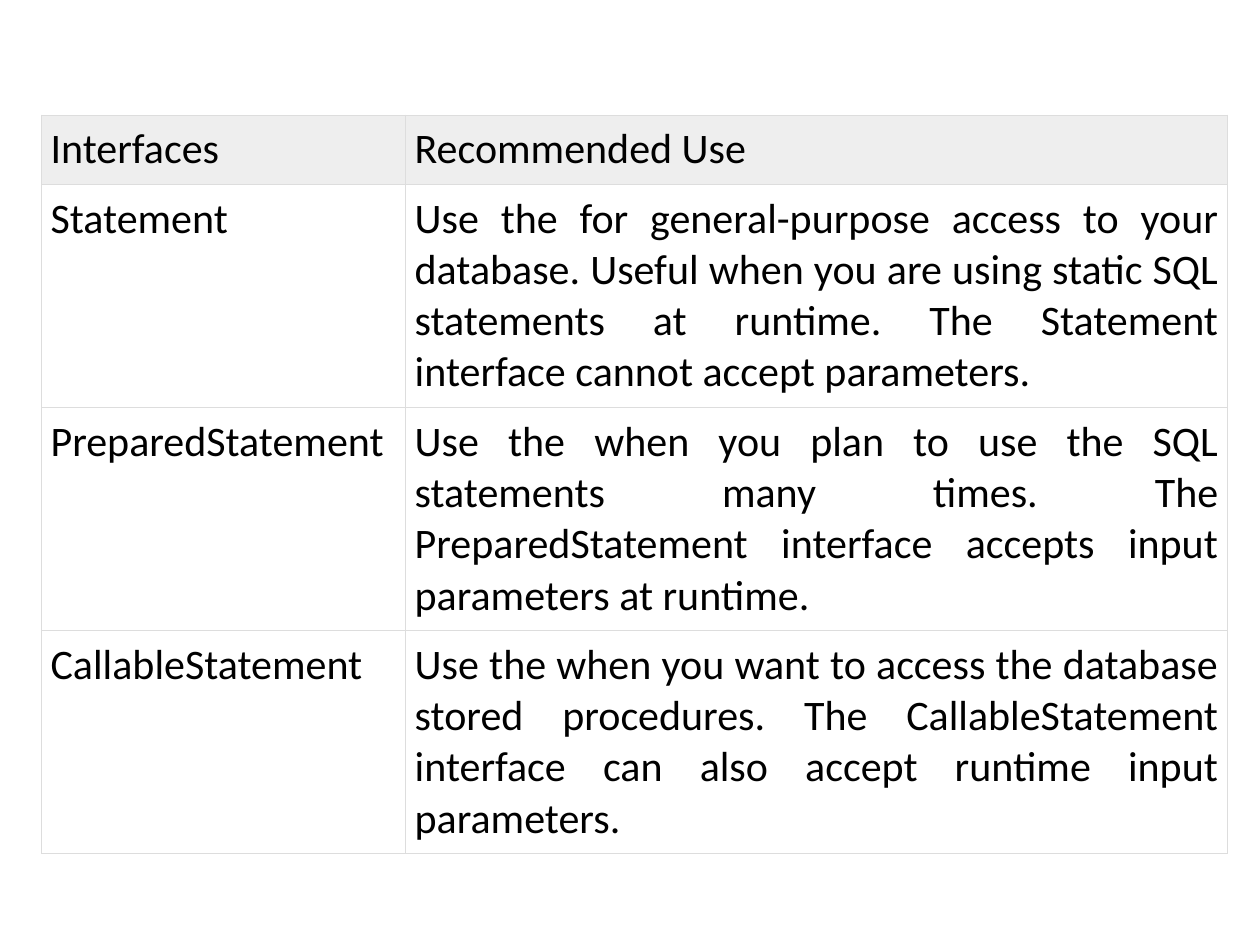
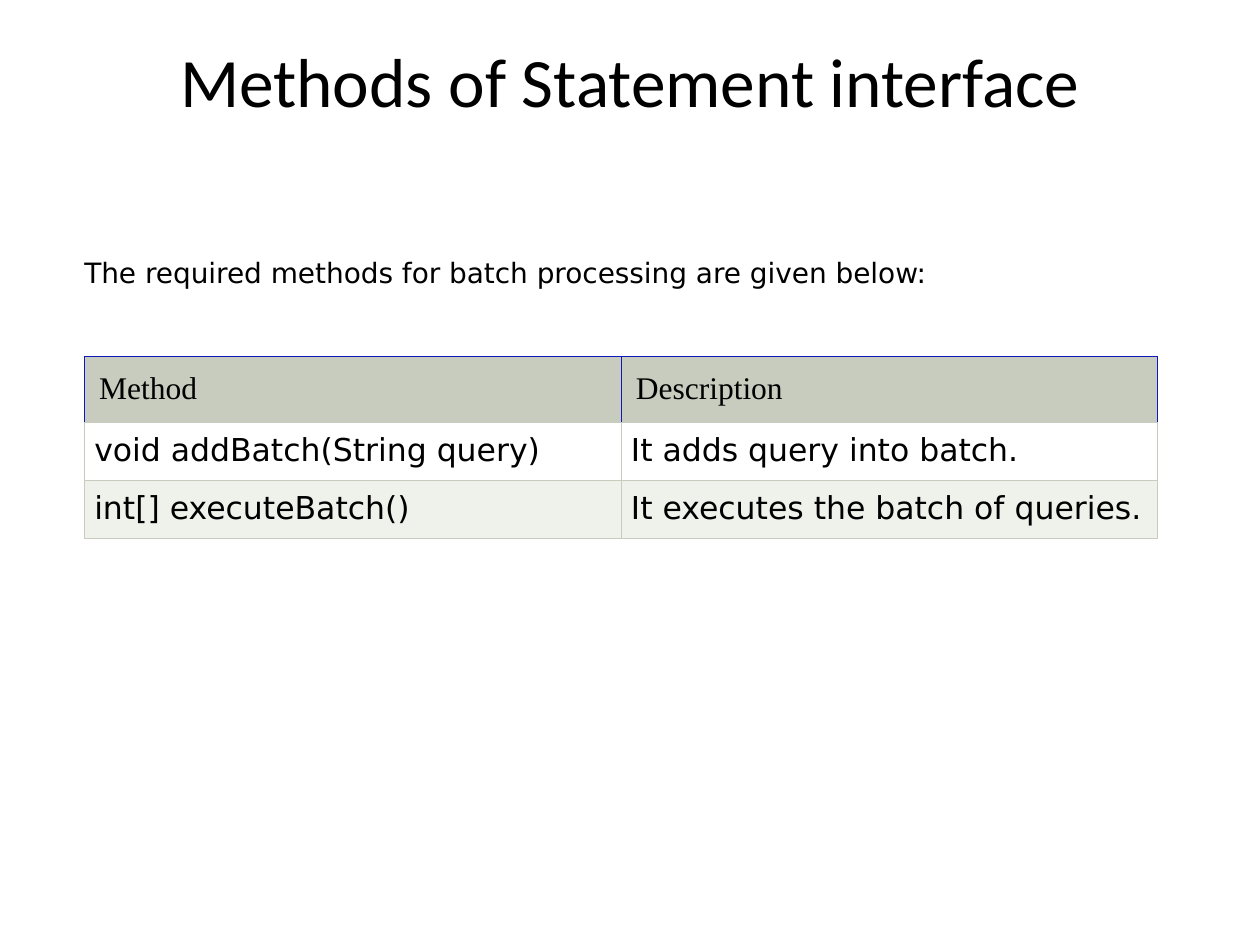
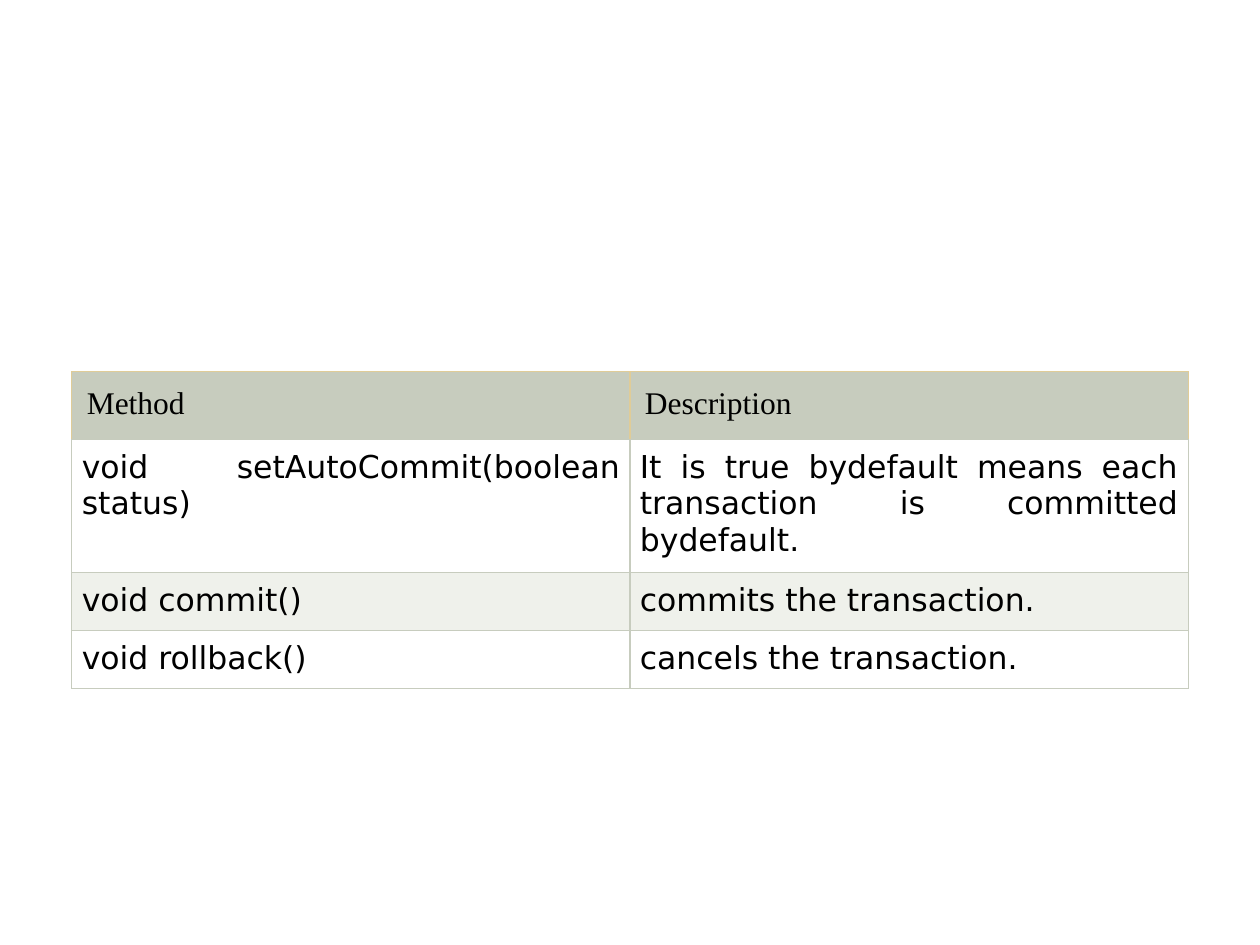
"""Builds three slides on the JDBC statement interfaces and their methods."""
from lxml import etree
from pptx import Presentation
from pptx import util as u
from pptx.dml.color import RGBColor
from pptx.enum import shapes, text
from pptx.oxml.ns import qn

BLACK = RGBColor(0x00, 0x00, 0x00)
WHITE = RGBColor(0xFF, 0xFF, 0xFF)
SILVER = RGBColor(0xDD, 0xDD, 0xDD)
MIST = RGBColor(0xEE, 0xEE, 0xEE)
SAGE = RGBColor(0xC7, 0xCC, 0xBE)
PALE_SAGE = RGBColor(0xEF, 0xF1, 0xEB)
BLUE = RGBColor(0x10, 0x17, 0xBB)
GOLD = RGBColor(0xE0, 0xCC, 0x98)

LEFT, CENTER, JUSTIFY = (text.PP_ALIGN.LEFT, text.PP_ALIGN.CENTER,
                         text.PP_ALIGN.JUSTIFY)
SIDES = ("lnL", "lnR", "lnT", "lnB")
MARGINS = ("margin_left", "margin_top", "margin_right", "margin_bottom")
TITLE_ONLY, BLANK = 5, 6

HEADING = {"name": "Times New Roman", "size": u.Pt(18)}
BODY = {"name": "DejaVu Sans", "size": u.Pt(18)}
NOTE = {"name": "DejaVu Sans", "size": u.Pt(16)}
TITLE = {"name": "Calibri", "size": u.Pt(39.6)}
LARGE = {"name": "Calibri", "size": u.Pt(24)}


def set_all(obj, values):
    for name, value in values.items():
        setattr(obj, name, value)


class Deck:
    """Holds the presentation, its style and the current slide."""

    def __init__(self):
        self.prs = Presentation()
        self.prs.slide_width, self.prs.slide_height = u.Cm(25.4), u.Cm(19.05)
        self.s = None

    def slide(self, layout=BLANK):
        self.s = self.prs.slides.add_slide(self.prs.slide_layouts[layout])

    def put_text(self, tf, words, font, align):
        p = tf.paragraphs[0]
        p.alignment = align
        r = p.add_run()
        r.text = words
        set_all(r.font, font)
        r.font.color.rgb = BLACK

    def title(self, words):
        sp = self.s.shapes.title
        set_all(sp, {"left": u.Cm(1.27), "top": u.Cm(0.76),
                     "width": u.Cm(22.86), "height": u.Cm(3.18)})
        set_all(sp.text_frame, {"margin_top": 0, "word_wrap": True,
                                "vertical_anchor": text.MSO_ANCHOR.TOP})
        self.put_text(sp.text_frame, words, TITLE, CENTER)

    def note(self, words, *box):
        sp = self.s.shapes.add_shape(shapes.MSO_SHAPE.RECTANGLE, *map(u.Cm, box))
        sp.shadow.inherit = False
        sp.fill.solid()
        sp.fill.fore_color.rgb = WHITE
        sp.line.fill.background()
        set_all(sp.text_frame, {
            "margin_left": 0, "word_wrap": True,
            "vertical_anchor": text.MSO_ANCHOR.MIDDLE,
            "auto_size": text.MSO_AUTO_SIZE.SHAPE_TO_FIT_TEXT})
        self.put_text(sp.text_frame, words, NOTE, JUSTIFY)

    def border(self, cell, colors):
        tc_pr = cell._tc.get_or_add_tcPr()
        for side, color in zip(SIDES, colors):
            ln = etree.SubElement(tc_pr, qn(f"a:{side}"), w=str(u.Pt(0.75)))
            fill = etree.SubElement(ln, qn("a:solidFill"))
            etree.SubElement(fill, qn("a:srgbClr"), val=str(color))

    def cell(self, cell, words, font, align, margin, fill, borders):
        set_all(cell, dict.fromkeys(MARGINS, u.Cm(margin)))
        self.border(cell, borders)
        cell.fill.solid()
        cell.fill.fore_color.rgb = fill
        self.put_text(cell.text_frame, words, font, align)

    def table(self, left, top, widths, heights, rows, style):
        frame = self.s.shapes.add_table(
            len(rows), len(widths), *map(u.Cm, (left, top, sum(widths), sum(heights))))
        tbl = frame.table
        set_all(tbl, {"first_row": False, "horz_banding": False})
        for col, width in zip(tbl.columns, widths):
            col.width = u.Cm(width)
        for i, (row, height) in enumerate(zip(rows, heights)):
            tbl.rows[i].height = u.Cm(height)
            part = style(i)
            for j, words in enumerate(row):
                self.cell(tbl.cell(i, j), words, part["font"], part["aligns"][j],
                          part["margin"], part["fill"], part["borders"])


def interface_style(i):
    return {"font": LARGE, "aligns": (LEFT, JUSTIFY), "margin": 0.18,
            "fill": WHITE if i else MIST, "borders": [SILVER] * 4}


def method_style(edge):
    def style(i):
        if i == 0:
            return {"font": HEADING, "aligns": (LEFT, LEFT), "margin": 0.3,
                    "fill": SAGE, "borders": [edge] * 3 + [SAGE]}
        return {"font": BODY, "aligns": (JUSTIFY, JUSTIFY), "margin": 0.2,
                "fill": WHITE if i % 2 else PALE_SAGE, "borders": [SAGE] * 4}
    return style


def main():
    deck = Deck()
    method_head = ("Method", "Description")

    deck.slide()
    deck.table(0.84, 2.32, (7.34, 16.56), (1.39, 4.5, 4.5, 4.5), [
        ("Interfaces", "Recommended Use"),
        ("Statement",
         "Use the for general-purpose access to your database. Useful when you are "
         "using static SQL statements at runtime. The Statement interface cannot "
         "accept parameters."),
        ("PreparedStatement",
         "Use the when you plan to use the SQL statements many times. The "
         "PreparedStatement interface accepts input parameters at runtime."),
        ("CallableStatement",
         "Use the when you want to access the database stored procedures. The "
         "CallableStatement interface can also accept runtime input parameters."),
    ], interface_style)

    deck.slide(TITLE_ONLY)
    deck.title("Methods of Statement interface")
    deck.table(1.7, 7.19, (10.82, 10.82), (1.33, 1.17, 1.17), [
        method_head,
        ("void addBatch(String query)", "It adds query into batch."),
        ("int[] executeBatch()", "It executes the batch of queries."),
    ], method_style(BLUE))
    deck.note("The required methods for batch processing are given below:",
              1.7, 5.03, 21.79, 0.94)

    deck.slide()
    deck.table(1.45, 7.49, (11.25, 11.25), (1.33, 2.63, 1.17, 1.17), [
        method_head,
        ("void setAutoCommit(boolean status)",
         "It is true bydefault means each transaction is committed bydefault."),
        ("void commit()", "commits the transaction."),
        ("void rollback()", "cancels the transaction."),
    ], method_style(GOLD))

    deck.prs.save("out.pptx")


if __name__ == "__main__":
    main()
